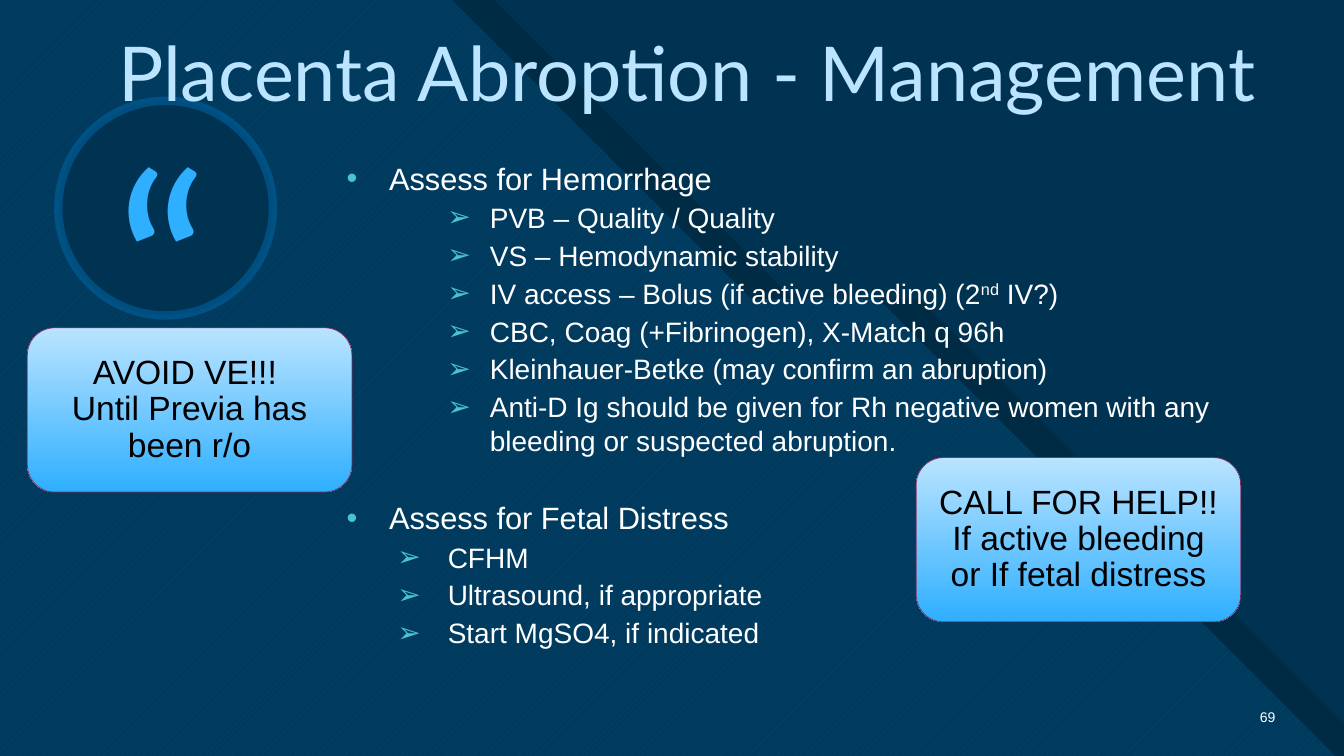
import pptx
import pptx.util
import pptx.dml.color
import pptx.enum.dml
import pptx.enum.shapes
import pptx.enum.text
import pptx.oxml
import pptx.oxml.ns

Cm = pptx.util.Cm
Pt = pptx.util.Pt
RGB = pptx.dml.color.RGBColor
Align = pptx.enum.text.PP_ALIGN
Anchor = pptx.enum.text.MSO_ANCHOR
Kind = pptx.enum.shapes.MSO_SHAPE
qn = pptx.oxml.ns.qn

NAVY = RGB(0x00, 0x33, 0x52)
BLUE = RGB(0x00, 0x65, 0xA4)
SKY = RGB(0x2F, 0xAF, 0xFF)
PALE = RGB(0xBA, 0xE4, 0xFF)
TEAL = RGB(0x47, 0xC3, 0xD3)
PLUM = RGB(0x8F, 0x2D, 0x63)
WHITE = RGB(0xFF, 0xFF, 0xFF)
BLACK = RGB(0x00, 0x00, 0x00)

WIDE, HIGH = 33.87, 19.05

# Bullet styles: sign, left margin and hanging indent in cm
MAIN = ("•", 1.24, -1.07)
DEEP = ("➢", 3.78, -1.07)
NEAR = ("➢", 2.72, -1.27)

BLEED = [
    "PVB – Quality / Quality",
    "VS – Hemodynamic stability",
    "IV access – Bolus (if active bleeding) (2^nd^ IV?)",
    "CBC, Coag (+Fibrinogen), X-Match q 96h",
    "Kleinhauer-Betke (may confirm an abruption)",
    "Anti-D Ig should be given for Rh negative women with any "
    "bleeding or suspected abruption.",
]
FETAL = ["CFHM", "Ultrasound, if appropriate", "Start MgSO4, if indicated"]


def write(frame, text, size=20, font="Arial", color=WHITE, align=Align.LEFT,
          line=None, before=0, bullet=None):
    """Add one paragraph; text between ^ signs is raised."""
    para = frame.paragraphs[0]
    if para.runs:
        para = frame.add_paragraph()
    para.alignment = align
    para.space_before = Pt(before)
    if line:
        para.line_spacing = line
    for i, part in enumerate(text.split("^")):
        run = para.add_run()
        run.text = part
        run.font.size = Pt(size)
        run.font.name = font
        run.font.color.rgb = color
        if i % 2:
            run.font._element.set("baseline", "30000")
    if bullet:
        sign, left, hang = bullet
        props = para._p.get_or_add_pPr()
        props.set("marL", str(Cm(left)))
        props.set("indent", str(Cm(hang)))
        tint = pptx.oxml.parse_xml(
            f'<a:buClr {pptx.oxml.ns.nsdecls("a")}>'
            f'<a:srgbClr val="{TEAL}"/></a:buClr>')
        props.append(tint)
        face = props.makeelement(qn("a:buFont"), {"typeface": "Arial"})
        props.append(face)
        props.append(props.makeelement(qn("a:buChar"), {"char": sign}))


def place(shape, box):
    shape.left, shape.top, shape.width, shape.height = map(Cm, box)


def setup(frame, anchor=Anchor.TOP):
    frame.word_wrap = True
    frame.auto_size = pptx.enum.text.MSO_AUTO_SIZE.NONE
    frame.vertical_anchor = anchor
    return frame


def label(slide, box, text, anchor=Anchor.TOP, **form):
    frame = setup(slide.shapes.add_textbox(*map(Cm, box)).text_frame, anchor)
    write(frame, text, **form)


def fade(part, share):
    """Set the opacity, in percent, of the first colour in an element."""
    color = next(part.iter(qn("a:srgbClr")))
    color.append(color.makeelement(qn("a:alpha"), {"val": str(share * 1000)}))


def wedge(slide, left, top):
    """Area left of a stepped diagonal that starts at `top` on the upper edge."""
    bend, step = 7.54, 3.2
    turn = top + bend + step
    run = min(WIDE - turn, HIGH - bend)
    points = [(top, 0), (top + bend, bend), (turn, bend),
              (turn + run, bend + run), (turn + run, HIGH), (left, HIGH)]
    form = slide.shapes.build_freeform(Cm(left), 0)
    form.add_line_segments([(Cm(x), Cm(y)) for x, y in points])
    shape = form.convert_to_shape()
    shape.shadow.inherit = False
    shape.line.fill.background()
    return shape


def backdrop(slide):
    slide.background.fill.solid()
    slide.background.fill.fore_color.rgb = NAVY
    # Dark band
    band = wedge(slide, 1.07, 12.45)
    band.fill.solid()
    band.fill.fore_color.rgb = BLACK
    # Striped area
    stripe = wedge(slide, 0, 11.4)
    stripe.fill.patterned()
    stripe.fill.pattern = pptx.enum.dml.MSO_PATTERN.WIDE_UPWARD_DIAGONAL
    stripe.fill.fore_color.rgb = TEAL
    stripe.fill.back_color.rgb = BLUE
    # Veil over both
    veil = wedge(slide, 0, 17.65)
    veil.fill.solid()
    veil.fill.fore_color.rgb = NAVY
    fade(veil._element.spPr, 85)


def badge(slide, box):
    x, y, side, _ = box
    ring = slide.shapes.add_shape(Kind.OVAL, *map(Cm, box))
    ring.shadow.inherit = False
    ring.fill.solid()
    ring.fill.fore_color.rgb = NAVY
    ring.line.color.rgb = BLUE
    ring.line.width = Pt(6)
    fade(ring._element.spPr.find(qn("a:ln")), 55)
    label(slide, (x + 1.2, y + 0.03, 2.79, 7.95), "“", size=184, font="Lato",
          color=SKY, align=Align.CENTER)


def header(slide, box):
    title = slide.shapes.title
    slide.shapes._spTree.append(title._element)
    place(title, box)
    write(setup(title.text_frame), "Placenta Abroption - Management",
          size=54, font="Lato", color=PALE, line=0.9)


def content(slide, box):
    body = slide.placeholders[1]
    slide.shapes._spTree.append(body._element)
    place(body, box)
    frame = setup(body.text_frame)
    groups = [("Assess for Hemorrhage", 3, BLEED, DEEP),
              ("Assess for Fetal Distress", 30, FETAL, NEAR)]
    for head, gap, items, style in groups:
        write(frame, head, size=22, before=gap, bullet=MAIN)
        for item in items:
            write(frame, item, before=3, bullet=style)


def card(slide, box, lines):
    shape = slide.shapes.add_shape(Kind.ROUNDED_RECTANGLE, *map(Cm, box))
    shape.shadow.inherit = False
    shape.fill.gradient()
    shape.fill.gradient_angle = 270
    for stop, color, spot in zip(shape.fill.gradient_stops, (PALE, SKY), (0, 1)):
        stop.color.rgb = color
        stop.position = spot
    shape.line.color.rgb = PLUM
    shape.line.width = Pt(0.5)
    frame = setup(shape.text_frame, Anchor.MIDDLE)
    for text in lines:
        write(frame, text, size=24, color=BLACK, align=Align.CENTER, line=0.9)


def main():
    deck = pptx.Presentation()
    deck.slide_width, deck.slide_height = Cm(WIDE), Cm(HIGH)
    slide = deck.slides.add_slide(deck.slide_layouts[1])
    backdrop(slide)
    badge(slide, (1.47, 2.54, 5.41, 5.41))
    # Slide number
    label(slide, (31.27, 17.55, 1.12, 1.02), "69", Anchor.MIDDLE, size=10,
          align=Align.RIGHT)
    header(slide, (2.72, 0.79, 31.14, 2.34))
    content(slide, (8.31, 3.89, 23.52, 12.95))
    # Warning cards
    card(slide, (23.09, 11.53, 8.18, 4.14),
         ["CALL FOR HELP!!", "If active bleeding or If fetal distress"])
    card(slide, (0.69, 8.26, 8.18, 4.14),
         ["AVOID VE!!! ", "Until Previa has been r/o"])
    deck.save("out.pptx")


if __name__ == "__main__":
    main()
